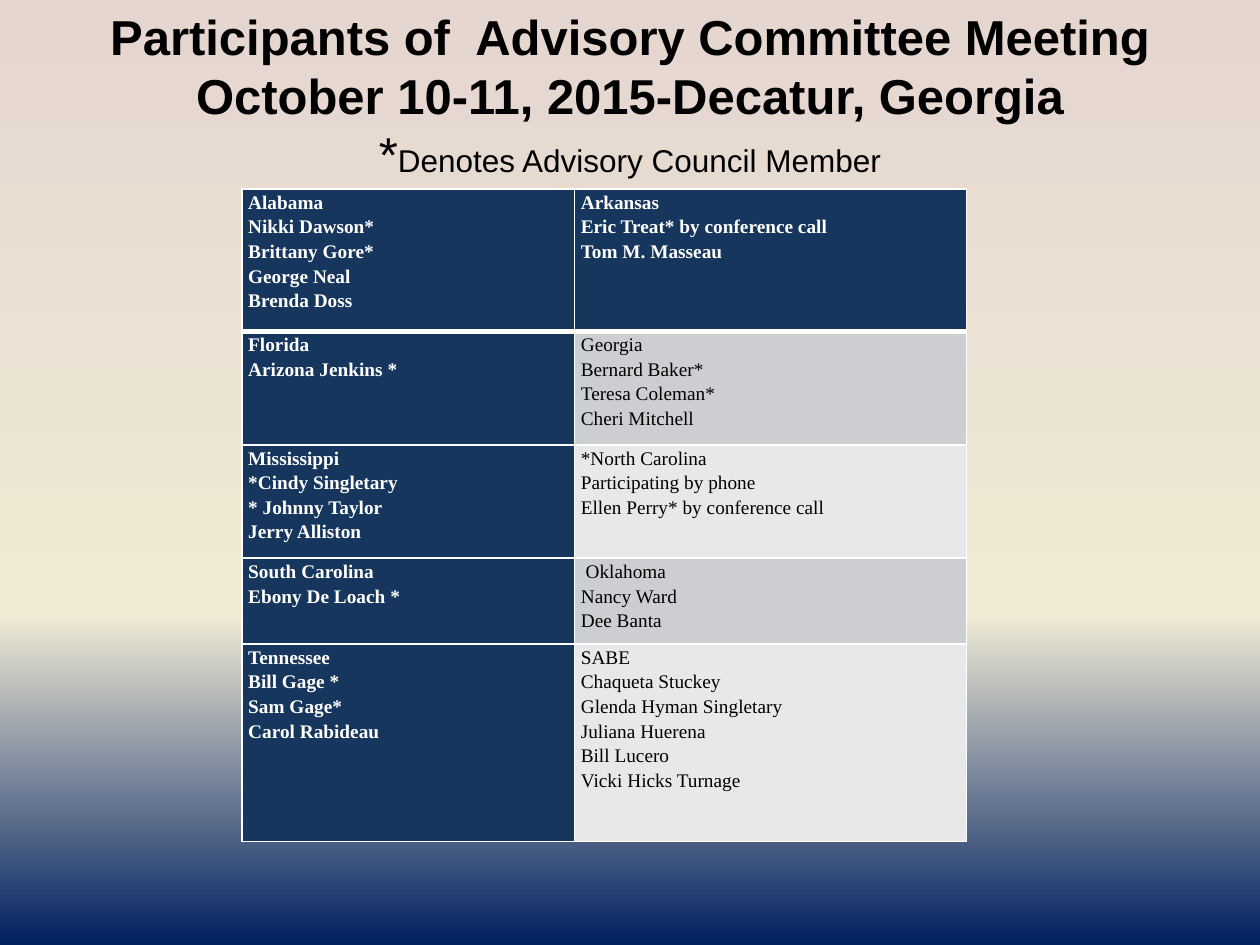
"""Build the slide listing the advisory committee meeting participants by state."""
import copy

import pptx
import pptx.dml.color
import pptx.enum.text
import pptx.oxml
import pptx.oxml.ns
import pptx.util

Inches = pptx.util.Inches
Pt = pptx.util.Pt

COLORS = {
    "sand": "E5D6D0", "cream": "F0EBD5", "deep_blue": "002060",
    "navy": "17365D", "gray": "CCCED2", "light_gray": "E8E8EA",
    "white": "FFFFFF", "black": "000000",
}
BACKGROUND_STOPS = [("sand", 0), ("cream", 0.65), ("deep_blue", 1)]

TITLE_RUNS = [
    ("Participants of  Advisory Committee Meeting October 10-11, 2015-Decatur, Georgia\v", 28, True),
    ("*", 28, False),
    ("Denotes Advisory Council Member", 18, False),
]
COLUMN_WIDTHS = [2.64, 3.11]
ROWS = [
    (1.13,
     ["Alabama", "Nikki Dawson*", "Brittany Gore*", "George Neal", "Brenda Doss"],
     ["Arkansas", "Eric Treat* by conference call", "Tom M. Masseau"]),
    (0.9,
     ["Florida", "Arizona Jenkins *"],
     ["Georgia", "Bernard Baker*", "Teresa Coleman*", "Cheri Mitchell"]),
    (0.9,
     ["Mississippi", "*Cindy Singletary", "* Johnny Taylor", "Jerry Alliston"],
     ["*North Carolina", "Participating by phone", "Ellen Perry* by conference call"]),
    (0.68,
     ["South Carolina", "Ebony De Loach *"],
     [" Oklahoma", "Nancy Ward", "Dee Banta"]),
    (1.57,
     ["Tennessee", "Bill Gage *", "Sam Gage*", "Carol Rabideau"],
     ["SABE", "Chaqueta Stuckey", "Glenda Hyman Singletary", "Juliana Huerena",
      "Bill Lucero", "Vicki Hicks Turnage"]),
]


def rgb(name):
    return pptx.dml.color.RGBColor.from_string(COLORS[name])


def set_background(slide):
    fill = slide.background.fill
    fill.gradient()
    fill.gradient_angle = 270
    stop_list = next(slide.element.iter(pptx.oxml.ns.qn("a:gsLst")))
    stop_list.append(copy.deepcopy(stop_list[-1]))
    for stop, (color, position) in zip(fill.gradient_stops, BACKGROUND_STOPS):
        stop.color.rgb = rgb(color)
        stop.position = position


def add_title(slide):
    box = slide.shapes.add_textbox(Inches(0.5), Inches(0.25), Inches(9), Inches(1.42))
    frame = box.text_frame
    frame.word_wrap = True
    frame.vertical_anchor = pptx.enum.text.MSO_ANCHOR.MIDDLE
    frame.margin_top = 0
    frame.margin_bottom = Inches(0.42)
    paragraph = frame.paragraphs[0]
    paragraph.alignment = pptx.enum.text.PP_ALIGN.CENTER
    paragraph.font.name = "Arial"
    paragraph.font.color.rgb = rgb("black")
    for text, size, bold in TITLE_RUNS:
        run = paragraph.add_run()
        run.text = text.rstrip("\v")
        run.font.name = "Arial"
        run.font.size = Pt(size)
        run.font.bold = bold
        run.font.color.rgb = rgb("black")
        if text.endswith("\v"):
            paragraph.add_line_break()


def set_borders(cell, bottom_width):
    properties = cell._tc.get_or_add_tcPr()
    widths = {"lnL": 1, "lnR": 1, "lnT": 1, "lnB": bottom_width}
    for index, (side, width) in enumerate(widths.items()):
        line = pptx.oxml.parse_xml(
            f'<a:{side} {pptx.oxml.ns.nsdecls("a")} w="{Pt(width)}"><a:solidFill>'
            f'<a:srgbClr val="{COLORS["white"]}"/></a:solidFill></a:{side}>')
        properties.insert(index, line)


def fill_cell(cell, names, fill_color, highlighted, bottom_width):
    cell.fill.solid()
    cell.fill.fore_color.rgb = rgb(fill_color)
    set_borders(cell, bottom_width)
    cell.margin_left = cell.margin_right = Inches(0.05)
    cell.margin_top = cell.margin_bottom = 0
    cell.text_frame.text = "\n".join(names)
    for paragraph in cell.text_frame.paragraphs:
        paragraph.line_spacing = 1.15
        paragraph.font.name = "Times New Roman"
        paragraph.font.size = Pt(11)
        paragraph.font.bold = highlighted
        paragraph.font.color.rgb = rgb("white" if highlighted else "black")


def add_participants(slide):
    height = sum(row[0] for row in ROWS)
    table = slide.shapes.add_table(
        len(ROWS), len(COLUMN_WIDTHS), Inches(1.92), Inches(1.5),
        Inches(sum(COLUMN_WIDTHS)), Inches(height)).table
    for column, width in zip(table.columns, COLUMN_WIDTHS):
        column.width = Inches(width)
    for row_index, (row_height, *groups) in enumerate(ROWS):
        table.rows[row_index].height = Inches(row_height)
        band = "gray" if row_index % 2 else "light_gray"
        for column_index, names in enumerate(groups):
            highlighted = row_index == 0 or column_index == 0
            fill_cell(table.cell(row_index, column_index), names,
                      "navy" if highlighted else band, highlighted,
                      3 if row_index == 0 else 1)
    for column_index in range(len(COLUMN_WIDTHS)):
        top_line = table.cell(1, column_index)._tc.tcPr.find(pptx.oxml.ns.qn("a:lnT"))
        top_line.set("w", str(Pt(3)))


def main():
    presentation = pptx.Presentation()
    presentation.slide_width = Inches(10)
    presentation.slide_height = Inches(7.5)
    slide = presentation.slides.add_slide(presentation.slide_layouts[6])
    set_background(slide)
    add_title(slide)
    add_participants(slide)
    presentation.save("out.pptx")


if __name__ == "__main__":
    main()
